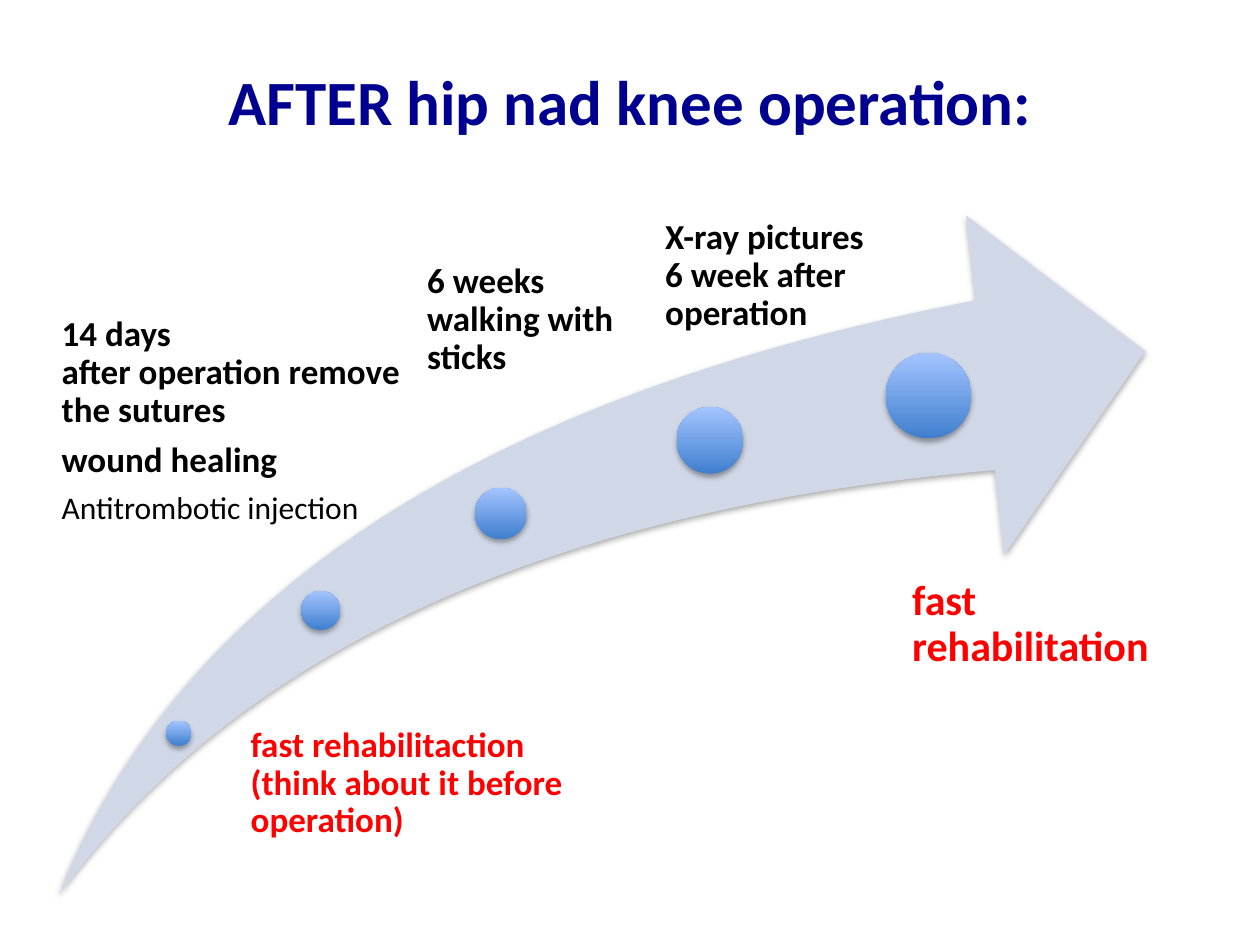
from dataclasses import dataclass

from lxml.etree import SubElement
from pptx import Presentation
from pptx.dml.color import RGBColor
from pptx.enum.shapes import MSO_SHAPE
from pptx.enum.text import MSO_ANCHOR, PP_ALIGN
from pptx.oxml.ns import qn
from pptx.util import Inches, Pt

COLUMNS, ROWS = 100, 75
CELL = Inches(10) // COLUMNS
FONT = "Calibri"
NAVY, BLACK, RED = "000090", "000000", "FF0000"
ARROW_FILL, DOT_DARK, DOT_LIGHT = "D0D8E8", "3F7FCE", "A4C4FF"


@dataclass(frozen=True)
class Box:
    column: float
    row: float
    columns: float
    rows: float

    def lengths(self) -> list[int]:
        return [round(cells * CELL) for cells in (self.column, self.row, self.columns, self.rows)]


@dataclass(frozen=True)
class Line:
    text: str
    size: int = 20
    bold: bool = True


@dataclass(frozen=True)
class Milestone:
    dot: Box
    label: Box
    inset: float
    lines: tuple[Line, ...]
    color: str = BLACK


MILESTONES = (
    Milestone(Box(13.2, 57.2, 2, 2), Box(18.8, 57.7, 27.2, 13.9), 1.1,
              (Line("fast rehabilitaction (think about it before operation)"),), RED),
    Milestone(Box(23.9, 46.9, 3.1, 3.1), Box(3.3, 25.1, 29, 19.3), 1.6,
              (Line("14 days\vafter operation remove the sutures"),
               Line("wound healing"),
               Line("Antitrombotic injection", 18, False))),
    Milestone(Box(37.7, 38.7, 4.1, 4.1), Box(31.7, 20.9, 22.8, 13.4), 2.2,
              (Line("6 weeks\vwalking with sticks"),)),
    Milestone(Box(53.7, 32.3, 5.3, 5.3), Box(50, 17.4, 23.3, 19.1), 2.8,
              (Line("X-ray pictures\v6 week after operation"),)),
    Milestone(Box(70.3, 28, 6.8, 6.8), Box(68.8, 46, 27.6, 22.7), 3.6,
              (Line("fast rehabilitation", 24),), RED),
)


def rgb(color: str) -> RGBColor:
    return RGBColor.from_string(color)


def format_paragraph(paragraph, size: int, color: str, bold: bool = True) -> None:
    paragraph.font.name = FONT
    paragraph.font.size = Pt(size)
    paragraph.font.bold = bold
    paragraph.font.color.rgb = rgb(color)


def add_shadowed_shape(slide, kind: MSO_SHAPE, box: Box):
    shape = slide.shapes.add_shape(kind, *box.lengths())
    shape.line.fill.background()
    shape.shadow.inherit = False
    effects = shape.element.spPr.find(qn("a:effectLst"))
    shadow = SubElement(effects, qn("a:outerShdw"), blurRad=str(Pt(3.1)),
                        dist=str(Pt(1.8)), dir="5400000", rotWithShape="0")
    shadow_color = SubElement(shadow, qn("a:srgbClr"), val=BLACK)
    SubElement(shadow_color, qn("a:alpha"), val="35000")
    return shape


def add_title(slide, text: str, box: Box) -> None:
    title = slide.shapes.title
    title.left, title.top, title.width, title.height = box.lengths()
    title.text_frame.text = text
    title.text_frame.vertical_anchor = MSO_ANCHOR.MIDDLE
    paragraph = title.text_frame.paragraphs[0]
    paragraph.alignment = PP_ALIGN.CENTER
    format_paragraph(paragraph, 36, NAVY)


def add_arrow(slide, box: Box) -> None:
    arrow = add_shadowed_shape(slide, MSO_SHAPE.SWOOSH_ARROW, box)
    arrow.adjustments[0] = arrow.adjustments[1] = 0.25
    arrow.fill.solid()
    arrow.fill.fore_color.rgb = rgb(ARROW_FILL)


def add_dot(slide, box: Box) -> None:
    dot = add_shadowed_shape(slide, MSO_SHAPE.OVAL, box)
    dot.fill.gradient()
    dot.fill.gradient_angle = 90
    for stop, color in zip(dot.fill.gradient_stops, (DOT_DARK, DOT_LIGHT)):
        stop.color.rgb = rgb(color)


def add_label(slide, milestone: Milestone) -> None:
    frame = slide.shapes.add_textbox(*milestone.label.lengths()).text_frame
    frame.word_wrap = True
    frame.margin_left = round(milestone.inset * CELL)
    frame.margin_top = frame.margin_right = frame.margin_bottom = 0
    for index, line in enumerate(milestone.lines):
        paragraph = frame.add_paragraph() if index else frame.paragraphs[0]
        paragraph.text = line.text
        paragraph.line_spacing = 0.9
        paragraph.space_after = Pt(0.35 * line.size)
        format_paragraph(paragraph, line.size, milestone.color, line.bold)


def main() -> None:
    presentation = Presentation()
    presentation.slide_width = COLUMNS * CELL
    presentation.slide_height = ROWS * CELL
    slide = presentation.slides.add_slide(presentation.slide_layouts[5])
    add_title(slide, "AFTER hip nad knee operation:", Box(5, 1.7, 90, 12.5))
    add_arrow(slide, Box(4.7, 17.1, 86.2, 53.9))
    for milestone in MILESTONES:
        add_dot(slide, milestone.dot)
        add_label(slide, milestone)
    presentation.save("out.pptx")


if __name__ == "__main__":
    main()
